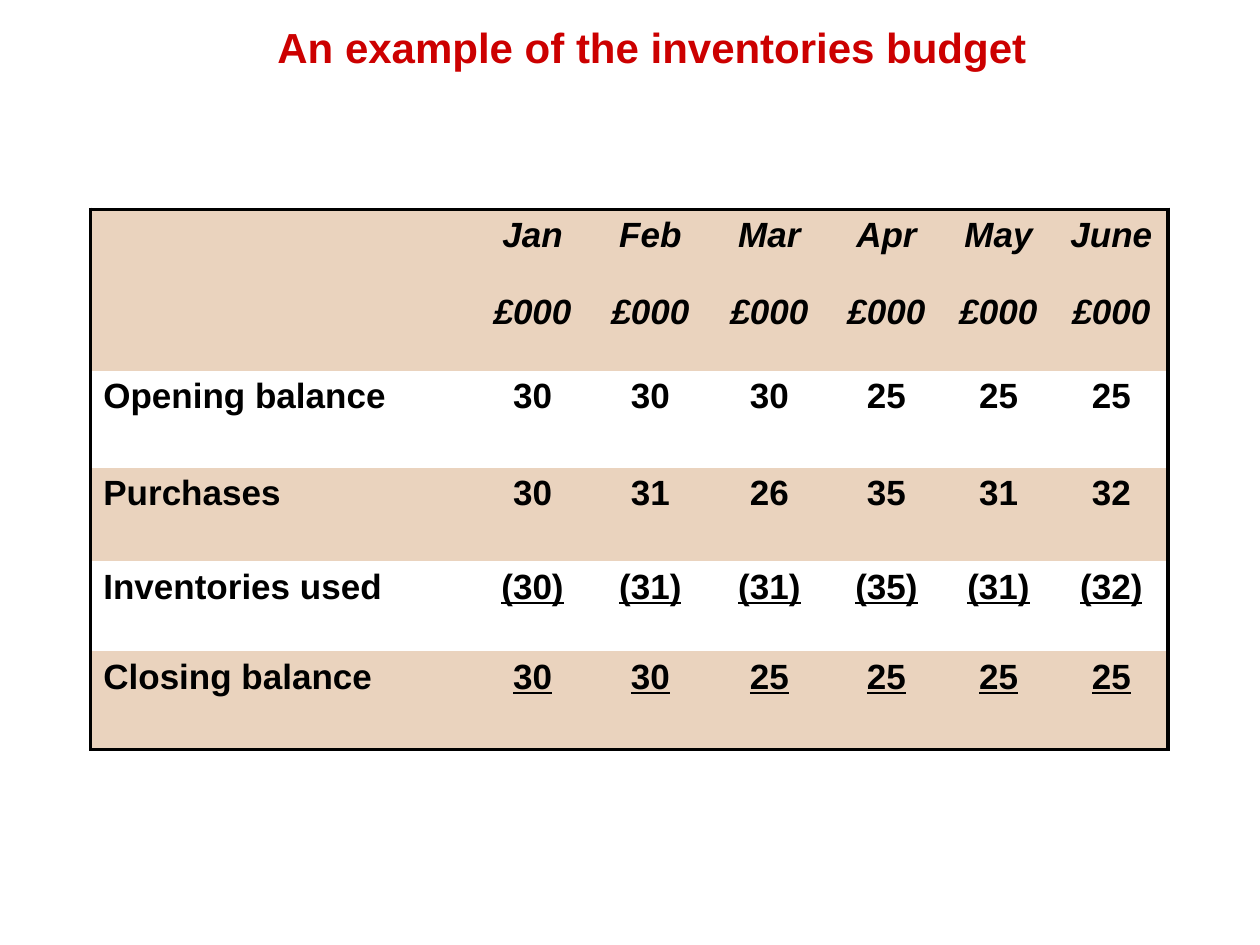
from lxml import etree
from pptx import Presentation
from pptx.dml.color import RGBColor
from pptx.enum import text
from pptx.oxml.ns import qn
from pptx.util import Cm, Pt

TITLE = "An example of the inventories budget"
MONTHS = ["Jan", "Feb", "Mar", "Apr", "May", "June"]
UNIT = "£000"
ROWS = [
    ("Opening balance", [30, 30, 30, 25, 25, 25], False),
    ("Purchases", [30, 31, 26, 35, 31, 32], False),
    ("Inventories used", ["(30)", "(31)", "(31)", "(35)", "(31)", "(32)"], True),
    ("Closing balance", [30, 30, 25, 25, 25, 25], True),
]
WIDTHS = [7.7, 2.41, 2.34, 2.46, 2.26, 2.26, 2.29]
HEIGHTS = [3.25, 1.96, 1.88, 1.82, 1.98]
COLORS = {"title": "CC0000", "ink": "000000", "band": "EAD3BE"}
PLAIN = "{2D5ABB26-0587-4C30-8999-92F81FD0307C}"


def write(frame, lines, size=20, color="ink", align="CENTER", gap=0, **style):
    for i, line in enumerate(lines):
        para = frame.paragraphs[0] if i == 0 else frame.add_paragraph()
        para.alignment = getattr(text.PP_ALIGN, align)
        para.space_before = Pt(gap if i else 0)
        run = para.add_run()
        run.text = str(line)
        font = run.font
        font.name, font.size, font.bold = "Arial", Pt(size), True
        font.color.rgb = RGBColor.from_string(COLORS[color])
        for key, value in style.items():
            setattr(font, key, value)


def edge(cell, side):
    props = cell._tc.get_or_add_tcPr()
    line = etree.SubElement(props, qn("a:ln" + side), w=str(Pt(2.25)))
    fill = etree.SubElement(line, qn("a:solidFill"))
    etree.SubElement(fill, qn("a:srgbClr"), val=COLORS["ink"])


def main():
    prs = Presentation()
    prs.slide_width, prs.slide_height = Cm(25.4), Cm(19.05)
    slide = prs.slides.add_slide(prs.slide_layouts[5])

    title = slide.shapes.title
    title.left, title.top, title.width, title.height = Cm(0.97), Cm(0.3), Cm(23.5), Cm(1.28)
    frame = title.text_frame
    frame.margin_left = Cm(1.1)
    frame.vertical_anchor = text.MSO_ANCHOR.MIDDLE
    write(frame, [TITLE], size=24, color="title")

    table = slide.shapes.add_table(
        len(HEIGHTS), len(WIDTHS), Cm(1.83), Cm(4.22), Cm(sum(WIDTHS)), Cm(sum(HEIGHTS))
    ).table
    table._tbl.tblPr.find(qn("a:tableStyleId")).text = PLAIN
    table.first_row = table.horz_banding = False
    for col, width in zip(table.columns, WIDTHS):
        col.width = Cm(width)
    for row, height in zip(table.rows, HEIGHTS):
        row.height = Cm(height)

    for c, month in enumerate(MONTHS, 1):
        write(table.cell(0, c).text_frame, [month, UNIT], gap=21.6, italic=True)
    for r, (label, values, under) in enumerate(ROWS, 1):
        write(table.cell(r, 0).text_frame, [label], align="LEFT")
        for c, value in enumerate(values, 1):
            write(table.cell(r, c).text_frame, [value], underline=under)

    last, end = len(HEIGHTS) - 1, len(WIDTHS) - 1
    for r in range(last + 1):
        for c in range(end + 1):
            cell = table.cell(r, c)
            sides = {"L": c == 0, "R": c == end, "T": r == 0, "B": r == last}
            for side, outer in sides.items():
                if outer:
                    edge(cell, side)
            if r % 2:
                cell.fill.background()
            else:
                cell.fill.solid()
                cell.fill.fore_color.rgb = RGBColor.from_string(COLORS["band"])

    prs.save("out.pptx")


if __name__ == "__main__":
    main()
